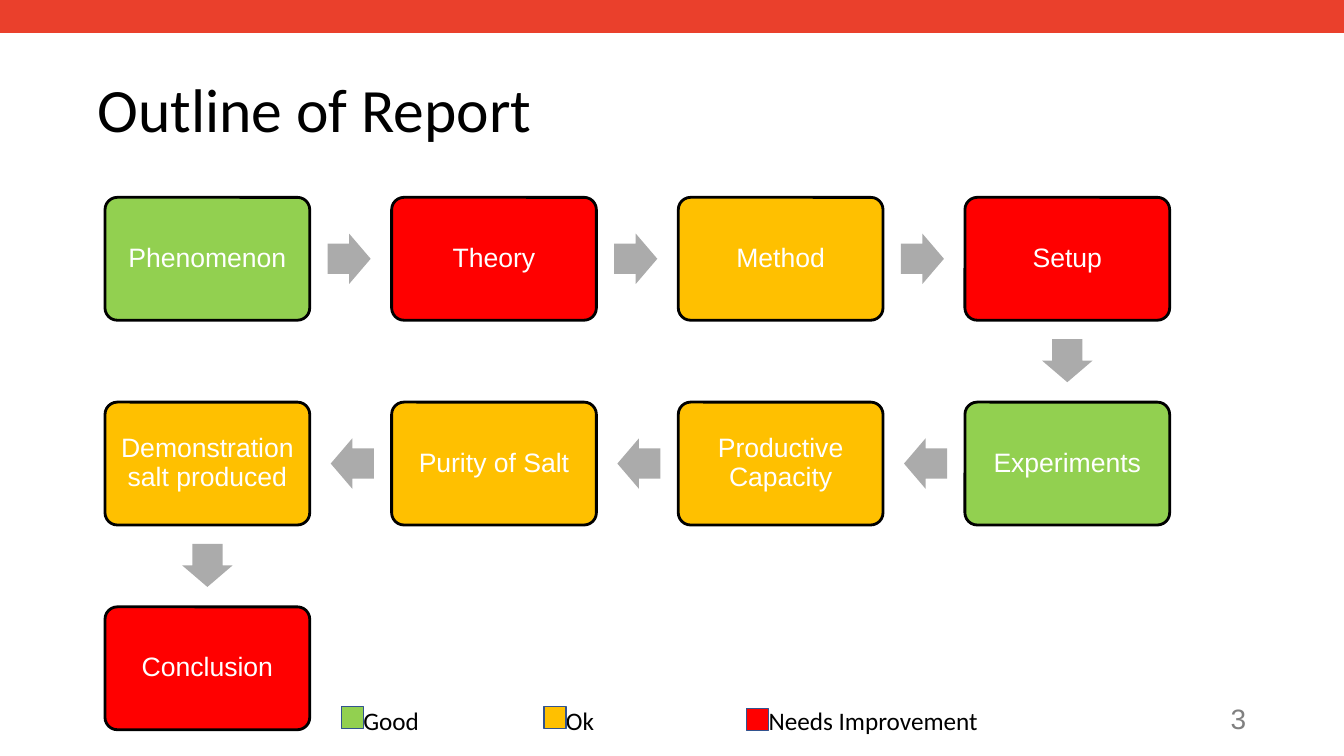
from dataclasses import dataclass

from lxml.etree import SubElement
from pptx import Presentation
from pptx.dml.color import RGBColor
from pptx.enum.shapes import MSO_CONNECTOR, MSO_SHAPE
from pptx.enum.text import MSO_ANCHOR as Anchor, MSO_AUTO_SIZE as AutoSize, PP_ALIGN as Align
from pptx.oxml.ns import qn
from pptx.util import Pt

PX = 9525  # EMU per px, 96 px to the inch


@dataclass(frozen=True)
class Theme:
    good: str = "92D050"
    ok: str = "FFC000"
    needs_work: str = "FF0000"
    banner: str = "EA402C"
    arrow: str = "ABABAB"
    swatch_edge: str = "32538F"
    page_number: str = "808080"
    black: str = "000000"
    white: str = "FFFFFF"
    heading_font: str = "Calibri"
    step_font: str = "Arial"
    title_size: int = 44
    page_size: int = 20
    step_size: int = 19
    legend_size: int = 18


THEME = Theme()


@dataclass(frozen=True)
class Step:
    label: str
    color: str


@dataclass(frozen=True)
class LegendEntry:
    label: str
    color: str
    left: int
    top: int
    width: int


STEPS = [
    Step("Phenomenon", THEME.good),
    Step("Theory", THEME.needs_work),
    Step("Method", THEME.ok),
    Step("Setup", THEME.needs_work),
    Step("Experiments", THEME.good),
    Step("Productive Capacity", THEME.ok),
    Step("Purity of Salt", THEME.ok),
    Step("Demonstration salt produced", THEME.ok),
    Step("Conclusion", THEME.needs_work),
]
LEGEND = [
    LegendEntry("Good", THEME.good, 325, 673, 60),
    LegendEntry("Ok", THEME.ok, 518, 673, 40),
    LegendEntry("Needs Improvement", THEME.needs_work, 711, 675, 210),
]

SLIDE_W, SLIDE_H = 1280, 720
COLUMNS = 4
FLOW_LEFT, FLOW_TOP = 100, 188
BOX_W, BOX_H = 195, 117
PITCH_X, PITCH_Y = 273, 195
ARROW_W, ARROW_H = 41, 48
ARROW_REACH_X, ARROW_REACH_Y = 135, 97
SWATCH = 21
LEGEND_TOP = 667


def emu(*lengths: int) -> list[int]:
    return [round(px * PX) for px in lengths]


def write(shape, text: str, font: str, size: int, color: str,
          align=Align.LEFT, spacing: float = 1.0, **frame_format) -> None:
    """Fill a shape with one formatted paragraph; frame_format sets its text frame."""
    frame = shape.text_frame
    for name, value in {"auto_size": AutoSize.NONE, **frame_format}.items():
        setattr(frame, name, value)
    paragraph = frame.paragraphs[0]
    paragraph.alignment, paragraph.line_spacing = align, spacing
    run = paragraph.add_run()
    run.text = text
    for name, value in {"name": font, "size": Pt(size)}.items():
        setattr(run.font, name, value)
    run.font.color.rgb = RGBColor.from_string(color)


def add_filled(slide, kind, bounds: tuple, fill: str, edge: str = "", edge_width: int = 0):
    shape = slide.shapes.add_shape(kind, *emu(*bounds))
    shape.shadow.inherit = False
    shape.fill.solid()
    shape.fill.fore_color.rgb = RGBColor.from_string(fill)
    if edge:
        shape.line.color.rgb = RGBColor.from_string(edge)
        shape.line.width = Pt(edge_width)
    else:
        shape.line.fill.background()
    return shape


def add_banner(slide) -> None:
    banner = slide.shapes.add_connector(MSO_CONNECTOR.STRAIGHT, *emu(0, 15, SLIDE_W, 15))
    banner.line.color.rgb = RGBColor.from_string(THEME.banner)
    banner.line.width = Pt(24)
    SubElement(banner._element.spPr, qn("a:effectLst"))


def add_title(slide) -> None:
    title = slide.shapes.title
    title.left, title.top, title.width, title.height = emu(88, 38, 1039, 139)
    write(title, "Outline of Report", THEME.heading_font, THEME.title_size, THEME.black,
          spacing=0.9, vertical_anchor=Anchor.MIDDLE, margin_left=5 * PX)


def cell(index: int) -> tuple[int, int]:
    """Column and row of a step; every second row runs right to left."""
    row, place = divmod(index, COLUMNS)
    return (COLUMNS - 1 - place if row % 2 else place), row


def add_step(slide, index: int, step: Step) -> None:
    column, row = cell(index)
    left, top = FLOW_LEFT + column * PITCH_X, FLOW_TOP + row * PITCH_Y
    box = add_filled(slide, MSO_SHAPE.ROUNDED_RECTANGLE, (left, top, BOX_W, BOX_H),
                     step.color, THEME.black, 2)
    box.adjustments[0] = 0.1
    margins = dict.fromkeys(
        ("margin_left", "margin_right", "margin_top", "margin_bottom"), 8 * PX)
    write(box, step.label, THEME.step_font, THEME.step_size, THEME.white, Align.CENTER, 0.9,
          word_wrap=True, vertical_anchor=Anchor.MIDDLE, **margins)
    if index + 1 < len(STEPS):
        add_arrow(slide, index, left + BOX_W / 2, top + BOX_H / 2)


def add_arrow(slide, index: int, center_x: float, center_y: float) -> None:
    """Point from the centre of one step towards the next."""
    (column, row), (next_column, next_row) = cell(index), cell(index + 1)
    across, down = next_column - column, next_row - row
    left = center_x + across * ARROW_REACH_X - ARROW_W / 2
    top = center_y + down * ARROW_REACH_Y - ARROW_H / 2
    arrow = add_filled(slide, MSO_SHAPE.RIGHT_ARROW, (left, top, ARROW_W, ARROW_H), THEME.arrow)
    arrow.adjustments[0], arrow.adjustments[1] = 0.6, 0.5
    arrow.rotation = 90 if down else 180 if across < 0 else 0


def add_legend_entry(slide, entry: LegendEntry) -> None:
    label = slide.shapes.add_textbox(*emu(entry.left + SWATCH, LEGEND_TOP, entry.width, 40))
    write(label, entry.label, THEME.heading_font, THEME.legend_size, THEME.black,
          word_wrap=False, margin_left=0)
    add_filled(slide, MSO_SHAPE.RECTANGLE, (entry.left, entry.top, SWATCH, SWATCH),
               entry.color, THEME.swatch_edge, 1)


def add_page_number(slide) -> None:
    number = slide.shapes.add_textbox(*emu(1167, 664, 25, 40))
    write(number, "3", THEME.step_font, THEME.page_size, THEME.page_number, Align.RIGHT,
          word_wrap=False, vertical_anchor=Anchor.MIDDLE,
          margin_left=5 * PX, margin_right=5 * PX)


def main() -> None:
    deck = Presentation()
    deck.slide_width, deck.slide_height = emu(SLIDE_W, SLIDE_H)
    slide = deck.slides.add_slide(deck.slide_layouts.get_by_name("Title Only"))
    add_banner(slide)
    add_title(slide)
    for entry in LEGEND:
        add_legend_entry(slide, entry)
    add_page_number(slide)
    for index, step in enumerate(STEPS):
        add_step(slide, index, step)
    deck.save("out.pptx")


if __name__ == "__main__":
    main()
